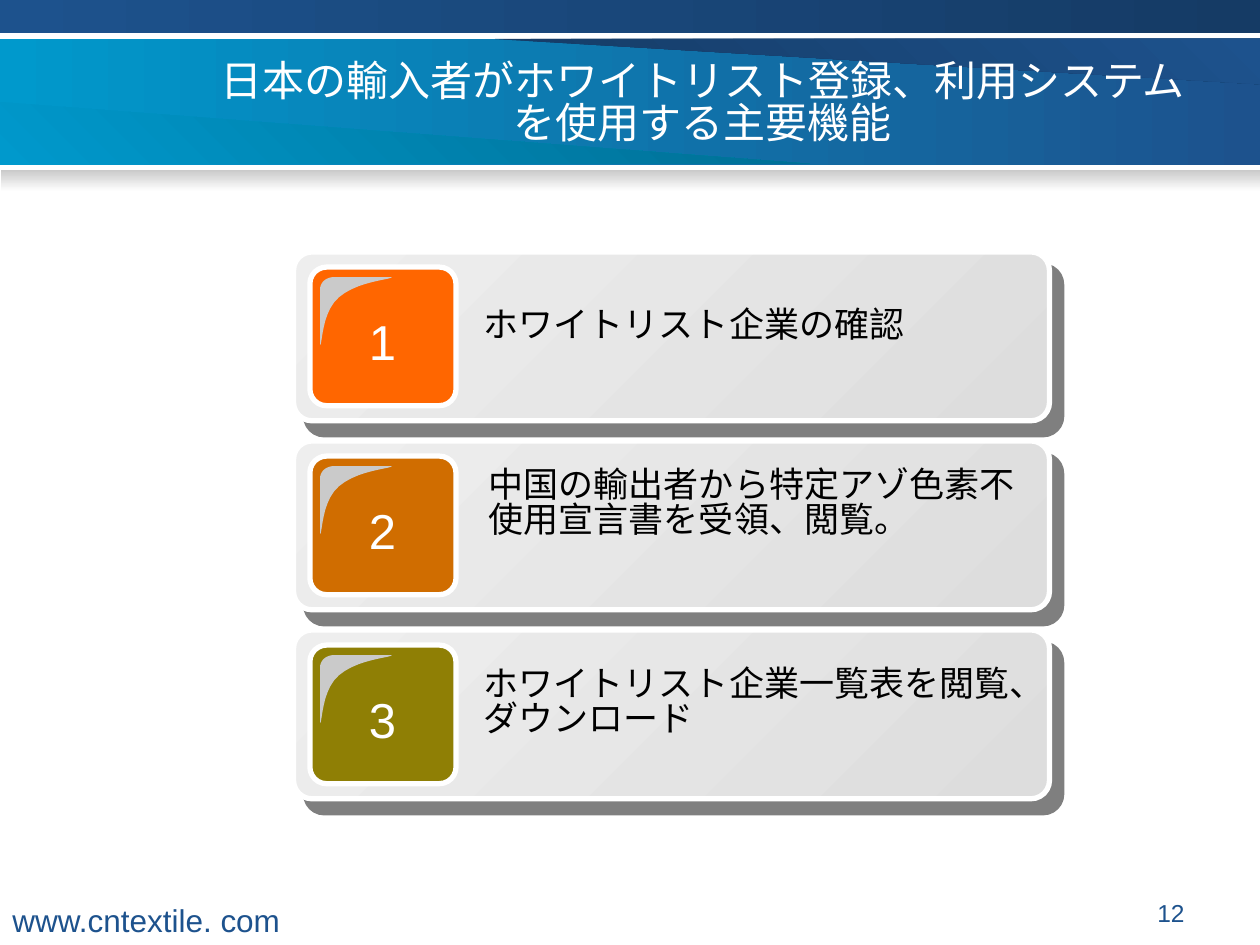
"""Build the slide listing three main functions of the whitelist system."""
from lxml.etree import SubElement
from pptx import Presentation
from pptx.dml.color import RGBColor
from pptx.enum.shapes import MSO_SHAPE
from pptx.enum.text import MSO_ANCHOR, PP_ALIGN
from pptx.oxml.ns import qn
from pptx.util import Inches, Pt

W, H = 10, 7.5
CJK, LATIN = "Noto Sans CJK JP", "Arial"
WHITE, BLACK, BLUE, NAVY, CYAN, TEAL, SILVER = (
    "FFFFFF", "000000", "1D528D", "153B65", "0099CC", "006D92", "CACACA")
TITLE = "日本の輸入者がホワイトリスト登録、利用システム\vを使用する主要機能"
BARS = [
    ((0, 0.31, W, 1), (CYAN, BLUE), 0),
    ((0, 0, W, 0.26), (BLUE, NAVY), 0),
    ((0.01, 1.35, 9.99, 0.17), (SILVER, WHITE), 270),
]
WEDGES = [
    ([(W, 0.31), (3.93, 0.31), (W, 0.67)], (NAVY, BLUE)),
    ([(0, 1.3), (6.43, 1.3), (0, 0.81)], (CYAN, TEAL)),
]
ITEMS = [
    ("FF6600", "ホワイトリスト企業の確認", 3.74, 0.41, 0.44),
    ("D06D00", "中国の輸出者から特定アゾ色素不使用宣言書を受領、閲覧。", 3.78, 0.18, 0.77),
    ("8F7F05", "ホワイトリスト企業一覧表を閲覧、ダウンロード", 3.74, 0.26, 0.77),
]
LEFT, TOP, PITCH = 2.33, 2, 1.5
GLOSS = [
    [(0.11, 0), (0.05, 0), (0, 0.04), (0, 0.1)],
    [(0, 0.54), (0.02, 0.54), (0.01, 0.28), (0.15, 0.16)],
    [(0.15, 0.16), (0.3, 0.03), (0.57, 0.02), (0.57, 0)],
]


def rgb(code):
    return RGBColor.from_string(code)


def solid(sp, code):
    sp.fill.solid()
    sp.fill.fore_color.rgb = rgb(code)


def gradient(sp, codes, angle):
    sp.fill.gradient()
    sp.fill.gradient_angle = angle
    for stop, code in zip(sp.fill.gradient_stops, codes):
        stop.color.rgb = rgb(code)


def add_box(s, kind, box, edge=None):
    sp = s.shapes.add_shape(kind, *map(Inches, box))
    sp.shadow.inherit = False
    if edge:
        sp.line.color.rgb, sp.line.width = rgb(edge), Pt(3)
    else:
        sp.line.fill.background()
    return sp


def add_outline(s, points):
    pts = [(Inches(x), Inches(y)) for x, y in points]
    builder = s.shapes.build_freeform(*pts[0])
    builder.add_line_segments(pts[1:], close=True)
    sp = builder.convert_to_shape()
    sp.shadow.inherit = False
    sp.line.fill.background()
    return sp


def bezier(curve, steps=10):
    for i in range(steps + 1):
        t = i / steps
        weights = ((1 - t) ** 3, 3 * t * (1 - t) ** 2, 3 * t * t * (1 - t), t ** 3)
        yield tuple(sum(w * pt[axis] for w, pt in zip(weights, curve)) for axis in (0, 1))


def drop_shadow(sp):
    effects = sp._element.spPr.find(qn("a:effectLst"))
    shadow = SubElement(effects, qn("a:outerShdw"), blurRad="0", dist=str(Pt(10.6)),
                        dir=str(49 * 60000), algn="ctr", rotWithShape="0")
    color = SubElement(shadow, qn("a:srgbClr"), val=BLACK)
    SubElement(color, qn("a:alpha"), val="50000")


def write(sp, text, size, code, face=LATIN, align=PP_ALIGN.LEFT, wrap=True, spacing=None):
    tf = sp.text_frame
    tf.word_wrap = wrap
    p = tf.paragraphs[0]
    p.text, p.alignment, p.line_spacing = text, align, spacing
    for r in p.runs:
        r.font.color.rgb = rgb(code)
        for key, value in {"size": Pt(size), "name": face, "bold": False}.items():
            setattr(r.font, key, value)
        SubElement(r._r.rPr, qn("a:ea"), typeface=face)


def add_text(s, box, *args, **formats):
    write(s.shapes.add_textbox(*map(Inches, box)), *args, **formats)


def add_item(s, number, top, color, text, left, drop, height):
    card = add_box(s, MSO_SHAPE.ROUNDED_RECTANGLE, (LEFT, top, 6, 1.34), WHITE)
    card.adjustments[0] = 0.11
    gradient(card, ("EEEEEE", "DDDDDD"), 315)
    drop_shadow(card)
    tile = add_box(s, MSO_SHAPE.ROUNDED_RECTANGLE, (LEFT + 0.13, top + 0.12, 1.16, 1.1), WHITE)
    tile.adjustments[0] = 0.12
    solid(tile, color)
    gloss = [(LEFT + 0.21 + x, top + 0.2 + y) for curve in GLOSS for x, y in bezier(curve)]
    solid(add_outline(s, gloss), SILVER)
    add_text(s, (LEFT + 0.49, top + 0.42, 0.43, 0.57), str(number), 28, WHITE,
             align=PP_ALIGN.CENTER, wrap=False)
    add_text(s, (left, top + drop, 4.41, height), text, 20, BLACK, CJK, spacing=0.83)


def main():
    prs = Presentation()
    prs.slide_width, prs.slide_height = Inches(W), Inches(H)
    s = prs.slides.add_slide(prs.slide_layouts[5])
    band, *strips = BARS
    gradient(add_box(s, MSO_SHAPE.RECTANGLE, band[0]), *band[1:])
    for points, codes in WEDGES:
        gradient(add_outline(s, points), codes, 45)
    for box, codes, angle in strips:
        gradient(add_box(s, MSO_SHAPE.RECTANGLE, box), codes, angle)

    title = s.shapes.title
    for key, value in zip(("left", "top", "width", "height"), (1.46, 0.36, 8.23, 0.95)):
        setattr(title, key, Inches(value))
    title.text_frame.vertical_anchor = MSO_ANCHOR.MIDDLE
    write(title, TITLE, 24, WHITE, CJK, PP_ALIGN.CENTER, spacing=0.83)
    s.shapes._spTree.append(title._element)

    for i, item in enumerate(ITEMS):
        add_item(s, i + 1, TOP + i * PITCH, *item)
    add_text(s, (0, 7.1, 2.34, 0.4), "www.cntextile. com", 18, BLUE, wrap=False)
    add_text(s, (7.17, 7.08, 2.33, 0.27), "12", 14, BLUE, align=PP_ALIGN.RIGHT)
    prs.save("out.pptx")


if __name__ == "__main__":
    main()
